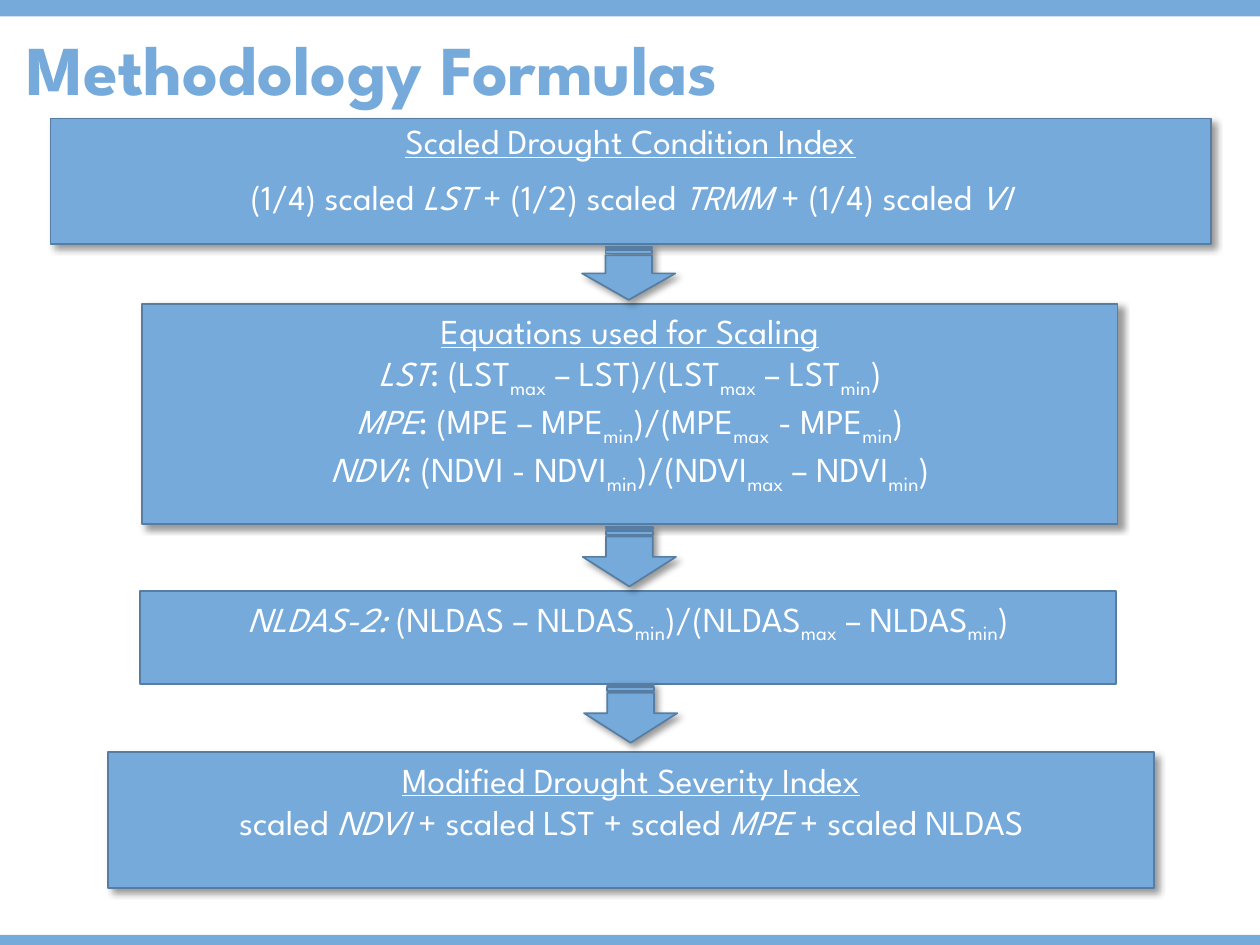
import pptx
import pptx.util
import pptx.dml.color
import pptx.enum.shapes
import pptx.enum.text
import pptx.oxml
import pptx.oxml.ns

Inches, Pt = pptx.util.Inches, pptx.util.Pt
SHAPES = pptx.enum.shapes.MSO_SHAPE
ALIGN = pptx.enum.text.PP_ALIGN
ANCHOR = pptx.enum.text.MSO_ANCHOR
BLUE = pptx.dml.color.RGBColor(0x75, 0xAA, 0xDB)
EDGE = pptx.dml.color.RGBColor(0x57, 0x7E, 0xA2)
WHITE = pptx.dml.color.RGBColor(0xFF, 0xFF, 0xFF)
FONT = "League Spartan"

SHADOW = (
    f'<a:effectLst {pptx.oxml.ns.nsdecls("a")}>'
    '<a:outerShdw blurRad="50800" dist="38100" dir="2700000" algn="tl" rotWithShape="0">'
    '<a:srgbClr val="000000"><a:alpha val="40000"/></a:srgbClr>'
    '</a:outerShdw></a:effectLst>'
)


def add_blue_shape(kind, left, top, width, height, outlined=True, shadowed=True):
    shape = slide.shapes.add_shape(
        kind, Inches(left), Inches(top), Inches(width), Inches(height))
    shape.fill.solid()
    shape.fill.fore_color.rgb = BLUE
    if outlined:
        shape.line.color.rgb = EDGE
        shape.line.width = Pt(1)
    else:
        shape.line.fill.background()
    shape.shadow.inherit = False
    if shadowed:
        properties = shape._element.spPr
        properties.remove(properties.find(pptx.oxml.ns.qn("a:effectLst")))
        properties.append(pptx.oxml.parse_xml(SHADOW))
    return shape


def write_formula(paragraph, formula):
    """Pieces are split by |; a leading # underlines, * slants and _ lowers."""
    for piece in formula.split("|"):
        mark = piece[0] if piece[0] in "#*_" else ""
        run = paragraph.add_run()
        run.text = piece[len(mark):]
        look = {"name": FONT, "size": Pt(20)}
        if mark == "#":
            look["underline"] = True
        elif mark == "*":
            look["italic"] = True
        for attribute, value in look.items():
            setattr(run.font, attribute, value)
        run.font.color.rgb = WHITE
        if mark == "_":
            run.font._element.set("baseline", "-25000")


presentation = pptx.Presentation()
presentation.slide_width = Inches(10)
presentation.slide_height = Inches(7.5)
slide = presentation.slides.add_slide(presentation.slide_layouts[5])

for top, height in ((0, 0.13), (7.42, 0.08)):
    add_blue_shape(SHAPES.RECTANGLE, 0, top, 10, height, outlined=False, shadowed=False)

title = slide.shapes.title
title.left, title.top = Inches(0.11), Inches(-0.52)
title.width, title.height = Inches(7.36), Inches(1.45)
title.text_frame.text = "Methodology Formulas"
title.text_frame.auto_size = pptx.enum.text.MSO_AUTO_SIZE.NONE
title.text_frame.vertical_anchor = ANCHOR.BOTTOM
heading = title.text_frame.paragraphs[0]
heading.alignment = ALIGN.LEFT
heading.line_spacing = 0.9
for attribute, value in {"name": FONT, "size": Pt(40), "bold": True}.items():
    setattr(heading.runs[0].font, attribute, value)
heading.runs[0].font.color.rgb = BLUE

# Left, top, width, height, shadow, line spacing, space between, formulas
steps = [
    (0.4, 0.94, 9.21, 1, True, 0.9, 10, [
        "#Scaled Drought Condition Index",
        "(1/4) scaled |*LST| + (1/2) scaled |*TRMM| + (1/4) scaled |*VI",
    ]),
    (1.13, 2.41, 7.74, 1.75, True, 1, 0, [
        "#Equations used for Scaling",
        "*LST|: (LST|_max| – LST)/(LST|_max| – LST|_min|)",
        "*MPE|: (MPE – MPE|_min|)/(MPE|_max| - MPE|_min|)",
        "*NDVI|: (NDVI - NDVI|_min|)/(NDVI|_max| – NDVI|_min|)",
    ]),
    (1.11, 4.69, 7.75, 0.74, False, 1, 0, [
        "*NLDAS-2:| (NLDAS – NLDAS|_min|)/(NLDAS|_max| – NLDAS|_min|)",
    ]),
    (0.86, 5.97, 8.3, 1.08, True, 1, 0, [
        "#Modified Drought Severity Index",
        "scaled |*NDVI| + scaled LST + scaled |*MPE| + scaled NLDAS",
    ]),
]
for left, top, width, height, shadowed, spacing, gap, formulas in steps:
    box = add_blue_shape(SHAPES.RECTANGLE, left, top, width, height, shadowed=shadowed)
    frame = box.text_frame
    frame.word_wrap = True
    frame.vertical_anchor = ANCHOR.TOP
    for index, formula in enumerate(formulas):
        paragraph = frame.add_paragraph() if index else frame.paragraphs[0]
        paragraph.alignment = ALIGN.CENTER
        paragraph.line_spacing = spacing
        paragraph.space_before = Pt(gap if index else 0)
        write_formula(paragraph, formula)

for left, top, length in ((4.78, 1.8, 0.42), (4.76, 4.05, 0.47), (4.77, 5.29, 0.47)):
    arrow = add_blue_shape(SHAPES.STRIPED_RIGHT_ARROW, left, top, length, 0.74)
    arrow.rotation = 90

presentation.save("out.pptx")
